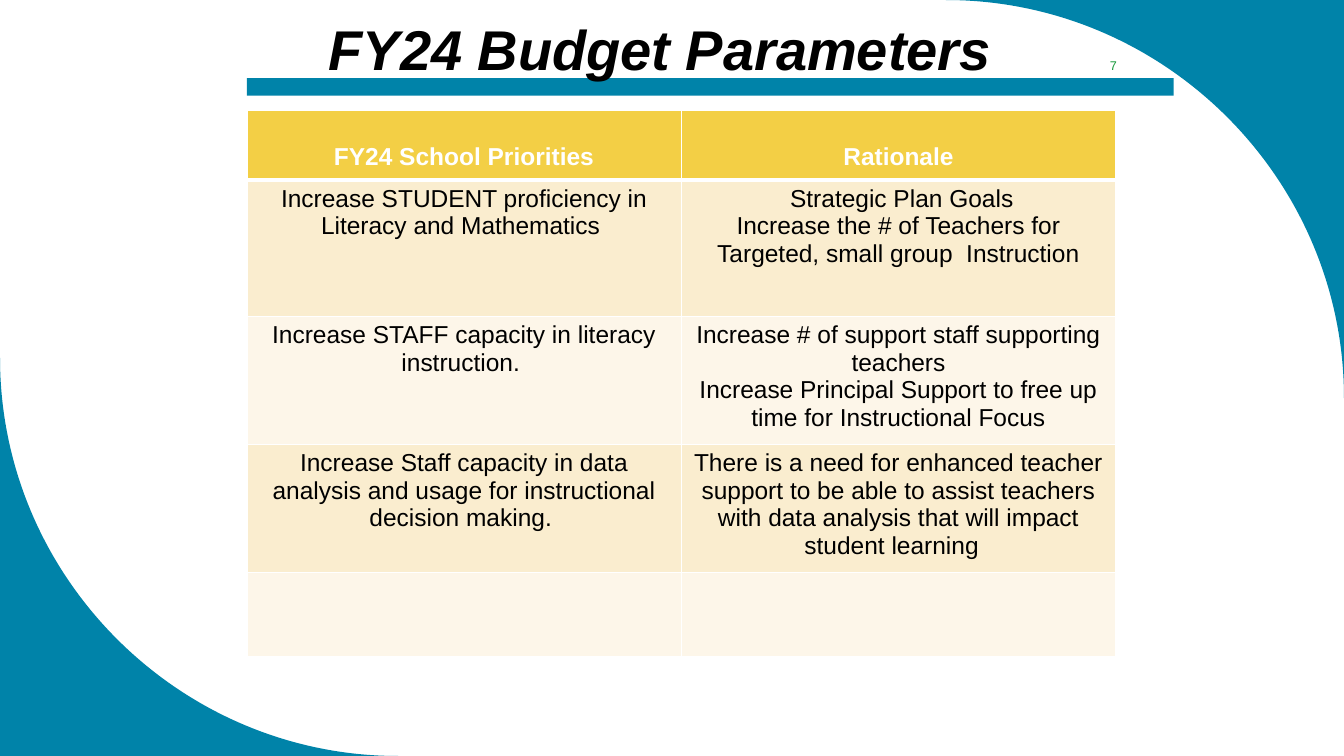
from lxml.etree import SubElement
from pptx import Presentation
from pptx.dml.color import RGBColor
from pptx.enum.shapes import MSO_SHAPE
from pptx.enum.text import MSO_ANCHOR, PP_ALIGN
from pptx.oxml.ns import qn
from pptx.util import Pt

TEAL = RGBColor(0x00, 0x83, 0xA9)
GOLD = RGBColor(0xF3, 0xCF, 0x45)
SAND = RGBColor(0xFA, 0xED, 0xCF)
CREAM = RGBColor(0xFD, 0xF6, 0xE9)
GREEN = RGBColor(0x15, 0x98, 0x39)
BLACK = RGBColor(0, 0, 0)
WHITE = RGBColor(255, 255, 255)

WIDTH, HEIGHT, RADIUS = 960, 540, 284.4
ARC_PULL = 0.55  # share of the way to the corner for a quarter circle's handles


def write(frame, lines, color, **font_format):
    """Fill a text frame with centred Arial paragraphs."""
    frame.word_wrap = True
    for index, line in enumerate(lines):
        para = frame.paragraphs[0] if index == 0 else frame.add_paragraph()
        para.alignment = PP_ALIGN.CENTER
        span = para.add_run()
        span.text = line
        span.font.color.rgb = color
        for name, value in {"name": "Arial", **font_format}.items():
            setattr(span.font, name, value)


def add_border(cell, side, points):
    line = SubElement(cell._tc.get_or_add_tcPr(), qn(f"a:{side}"), w=str(Pt(points)))
    fill = SubElement(line, qn("a:solidFill"))
    SubElement(fill, qn("a:srgbClr"), val=str(WHITE))


deck = Presentation()
deck.slide_width, deck.slide_height = Pt(WIDTH), Pt(HEIGHT)
page = deck.slides.add_slide(deck.slide_layouts[6])

# Each corner: its point, then the two ends of its quarter circle
corners = [
    [(WIDTH, 0), (WIDTH - RADIUS, 0), (WIDTH, RADIUS)],
    [(0, HEIGHT), (RADIUS, HEIGHT), (0, HEIGHT - RADIUS)],
]
teal_shapes = []
for points in corners:
    corner, *ends = [(Pt(x), Pt(y)) for x, y in points]
    builder = page.shapes.build_freeform(*corner)
    builder.add_line_segments(ends, close=True)
    shape = builder.convert_to_shape()
    teal_shapes.append(shape)

    # Bend the straight side between the ends into a curve
    tip, start, end = [
        (int(point.get("x")), int(point.get("y")))
        for point in shape._element.iter(qn("a:pt"))
    ]
    side = list(shape._element.iter(qn("a:lnTo")))[1]
    curve = SubElement(side.getparent(), qn("a:cubicBezTo"))
    handles = [
        [round(a + ARC_PULL * (b - a)) for a, b in zip(arc_end, tip)]
        for arc_end in (start, end)
    ]
    for x, y in [*handles, end]:
        SubElement(curve, qn("a:pt"), x=str(x), y=str(y))
    side.getparent().replace(side, curve)

teal_shapes.append(page.shapes.add_shape(
    MSO_SHAPE.RECTANGLE, Pt(176.4), Pt(55.8), Pt(662), Pt(12.5)))
for shape in teal_shapes:
    shape.shadow.inherit = False
    shape.fill.solid()
    shape.fill.fore_color.rgb = TEAL
    shape.line.fill.background()

title = page.shapes.add_textbox(Pt(219.6), Pt(6.5), Pt(503.3), Pt(55.4))
write(title.text_frame, ["FY24 Budget Parameters"], BLACK,
      size=Pt(40), bold=True, italic=True)

rows = [
    (["FY24 School Priorities"], ["Rationale"]),
    (["Increase STUDENT proficiency in Literacy and Mathematics "],
     [" Strategic Plan Goals",
      "Increase the # of Teachers for Targeted, small group  Instruction"]),
    (["Increase STAFF capacity in literacy instruction. "],
     ["Increase # of support staff supporting teachers",
      "Increase Principal Support to free up time for Instructional Focus"]),
    (["Increase Staff capacity in data analysis and usage for instructional "
      "decision making. "],
     ["There is a need for enhanced teacher support to be able to assist teachers "
      "with data analysis that will impact student learning  "]),
    ([], []),
]
row_heights = [50, 97.5, 91.4, 91.4, 59.8]
row_fills = [GOLD, SAND, CREAM, SAND, CREAM]

table = page.shapes.add_table(
    len(rows), 2, Pt(176.4), Pt(78.8), Pt(620.6), Pt(sum(row_heights))).table
for column in table.columns:
    column.width = Pt(310.3)

for row_index, texts in enumerate(rows):
    is_header = row_index == 0
    table.rows[row_index].height = Pt(row_heights[row_index])
    for column_index, lines in enumerate(texts):
        cell = table.cell(row_index, column_index)
        write(cell.text_frame, lines, WHITE if is_header else BLACK,
              size=Pt(17.5), bold=is_header)
        if is_header:
            cell.vertical_anchor = MSO_ANCHOR.BOTTOM
            cell.margin_bottom = Pt(7)
        borders = {"lnL": 1, "lnR": 1, "lnT": 3 if row_index == 1 else 1,
                   "lnB": 3 if is_header else 1}
        for side, points in borders.items():
            add_border(cell, side, points)
        cell.fill.solid()
        cell.fill.fore_color.rgb = row_fills[row_index]

number = page.shapes.add_textbox(Pt(766.2), Pt(36), Pt(58.3), Pt(21.6))
number.text_frame.vertical_anchor = MSO_ANCHOR.MIDDLE
write(number.text_frame, ["7"], GREEN, size=Pt(9))

deck.save("out.pptx")
